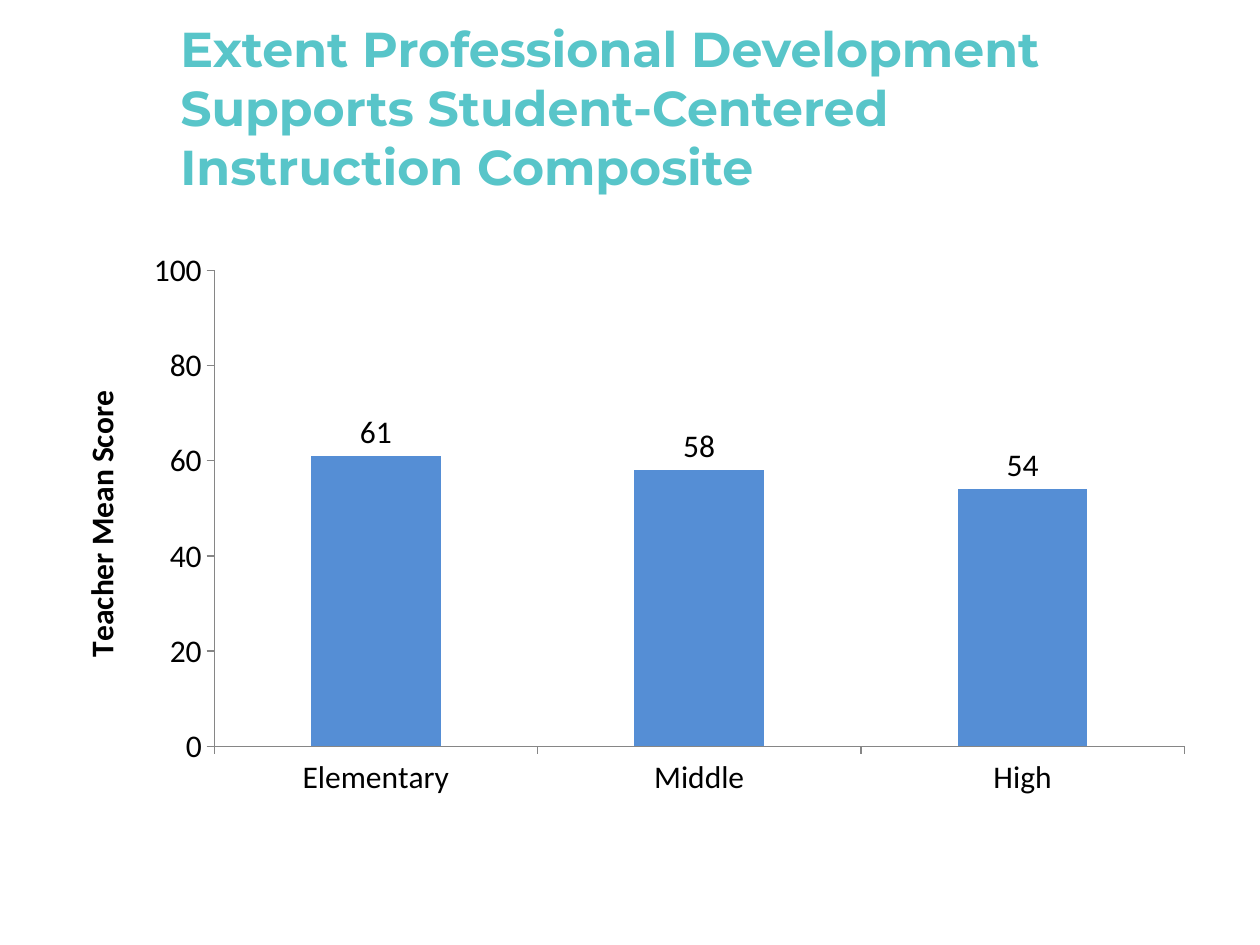
from dataclasses import dataclass
from lxml.etree import SubElement
from pptx import Presentation
from pptx.chart.data import CategoryChartData as Data
from pptx.dml.color import RGBColor as RGB
from pptx.enum.chart import XL_CHART_TYPE as Kind, XL_LABEL_POSITION as Pos, XL_TICK_MARK as Tick
from pptx.enum.text import MSO_ANCHOR as Anchor
from pptx.oxml.ns import qn
from pptx.util import Inches, Pt


@dataclass(frozen=True)
class Theme:
    teal: str = "58C5C9"
    blue: str = "558ED5"
    ink: str = "000000"
    axis: str = "868686"
    head: str = "Montserrat"
    body: str = "Calibri"
    big: int = 28
    mid: int = 18


THEME = Theme()
WIDE, HIGH = 10, 7.5
COLS, ROWS = 24, 20


def place(col, row, cols, rows):
    wide, high = WIDE / COLS, HIGH / ROWS
    return [Inches(n) for n in (col * wide, row * high, cols * wide, rows * high)]


def style(font, name, size, color, bold):
    font.name, font.size, font.bold = name, Pt(size), bold
    font.color.rgb = RGB.from_string(color)


def add_title(slide, box, text):
    frame = slide.shapes.add_textbox(*box).text_frame
    frame.word_wrap = True
    frame.vertical_anchor = Anchor.MIDDLE
    frame.text = text
    style(frame.paragraphs[0].runs[0].font, THEME.head, THEME.big, THEME.teal, True)


def set_plot(chart, **area):
    plot = chart.plots[0]._element.getparent()
    layout = plot.find(qn("c:layout"))
    if layout is None:
        layout = SubElement(plot, qn("c:layout"))
        plot.insert(0, layout)
    manual = SubElement(layout, qn("c:manualLayout"))
    modes = {"layoutTarget": "inner", "xMode": "edge", "yMode": "edge"}
    for tag, value in (modes | area).items():
        SubElement(manual, qn(f"c:{tag}")).set("val", str(value))


def set_axes(chart):
    for axis in (chart.category_axis, chart.value_axis):
        axis.has_major_gridlines = False
        axis.major_tick_mark = Tick.OUTSIDE
        axis.minor_tick_mark = Tick.NONE
        axis.format.line.color.rgb = RGB.from_string(THEME.axis)
        axis.format.line.width = Pt(0.75)
    axis = chart.value_axis
    axis.minimum_scale, axis.maximum_scale, axis.major_unit = 0, 100, 20
    frame = axis.axis_title.text_frame
    frame.text = "Teacher Mean Score"
    style(frame.paragraphs[0].runs[0].font, THEME.body, THEME.mid, THEME.ink, True)


def add_bars(slide, box, scores):
    data = Data()
    data.categories = scores.keys()
    data.add_series("Series 1", scores.values())
    chart = slide.shapes.add_chart(Kind.COLUMN_CLUSTERED, *box, data).chart
    chart.has_title = chart.has_legend = False
    style(chart.font, THEME.body, THEME.mid, THEME.ink, False)
    set_axes(chart)
    set_plot(chart, x=0.14, y=0.05, w=0.84, h=0.84)
    plot = chart.plots[0]
    plot.gap_width, plot.vary_by_categories = 150, False
    fill = plot.series[0].format.fill
    fill.solid()
    fill.fore_color.rgb = RGB.from_string(THEME.blue)
    plot.has_data_labels = True
    labels = plot.data_labels
    labels.show_value, labels.position = True, Pos.OUTSIDE_END
    style(labels.font, THEME.body, THEME.mid, THEME.ink, False)


def main():
    deck = Presentation()
    deck.slide_width, deck.slide_height = Inches(WIDE), Inches(HIGH)
    slide = deck.slides.add_slide(deck.slide_layouts[6])
    add_title(
        slide,
        place(3.2, 1, 19.6, 2.53),
        "Extent Professional Development Supports Student-Centered Instruction Composite",
    )
    add_bars(slide, place(1, 5.12, 22, 12), {"Elementary": 61, "Middle": 58, "High": 54})
    deck.save("out.pptx")


if __name__ == "__main__":
    main()
